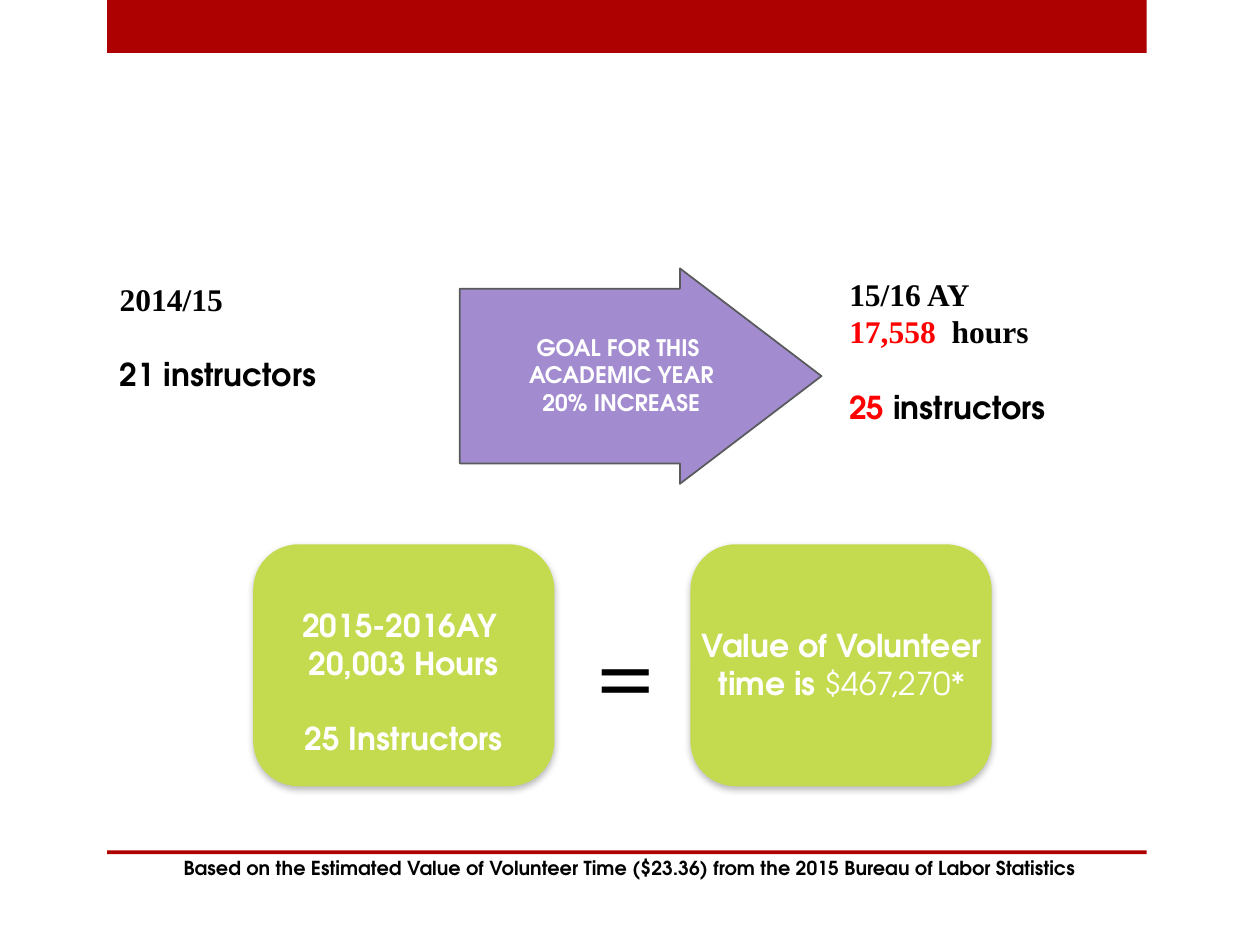
from dataclasses import dataclass

from lxml import etree
from pptx import Presentation
from pptx.dml.color import RGBColor
from pptx.enum.shapes import MSO_SHAPE
from pptx.enum.text import PP_ALIGN
from pptx.oxml.ns import qn
from pptx.util import Inches, Pt

RECTANGLE = MSO_SHAPE.RECTANGLE
ROUNDED = MSO_SHAPE.ROUNDED_RECTANGLE
ARROW = MSO_SHAPE.RIGHT_ARROW
LEFT, CENTER = PP_ALIGN.LEFT, PP_ALIGN.CENTER


@dataclass(frozen=True)
class Theme:
    red: str = "AD0101"
    green: str = "C5DB4F"
    purple: str = "A28CCF"
    outline: str = "585A5C"
    accent: str = "FF0000"
    black: str = "000000"
    white: str = "FFFFFF"
    sans: str = "TeX Gyre Adventor"
    serif: str = "Times New Roman"
    body: int = 18
    goal: int = 13
    note: int = 11
    symbol: int = 48
    gap: float = 21.6


THEME = Theme()


@dataclass(frozen=True)
class Box:
    left: float
    top: float
    width: float
    height: float

    def inner(self, left, top, width, height):
        return Box(self.left + left, self.top + top, width, height)

    def lengths(self):
        return [Inches(value) for value in (self.left, self.top, self.width, self.height)]


@dataclass(frozen=True)
class Span:
    text: str
    color: str = THEME.black
    font: str = THEME.sans
    size: int = THEME.body
    bold: bool = True


def add_block(slide, kind, box, color, adjustments=()):
    shape = slide.shapes.add_shape(kind, *box.lengths())
    shape.shadow.inherit = False
    shape.fill.solid()
    shape.fill.fore_color.rgb = RGBColor.from_string(color)
    shape.line.fill.background()
    for index, value in enumerate(adjustments):
        shape.adjustments[index] = value
    return shape


def add_soft_shadow(shape):
    effects = shape._element.spPr.find(qn("a:effectLst"))
    shadow = etree.SubElement(
        effects, qn("a:outerShdw"), blurRad=str(Pt(4)), dist=str(Pt(2)), dir="5400000", rotWithShape="0"
    )
    color = etree.SubElement(shadow, qn("a:srgbClr"), val=THEME.black)
    etree.SubElement(color, qn("a:alpha"), val="28000")


def add_text(slide, box, lines, alignment=LEFT, wrap=True, gap_before=None):
    text_frame = slide.shapes.add_textbox(*box.lengths()).text_frame
    text_frame.word_wrap = wrap
    text_frame.margin_left = text_frame.margin_right = Inches(0.05)
    text_frame.margin_top = text_frame.margin_bottom = Inches(0.05)
    for index, spans in enumerate(lines):
        paragraph = text_frame.add_paragraph() if index else text_frame.paragraphs[0]
        paragraph.alignment = alignment
        if index == gap_before:
            paragraph.space_before = Pt(THEME.gap)
        for span in spans:
            run = paragraph.add_run()
            run.text = span.text
            run.font.name = span.font
            run.font.size = Pt(span.size)
            run.font.bold = span.bold
            run.font.color.rgb = RGBColor.from_string(span.color)


def add_frame(slide, box):
    add_block(slide, RECTANGLE, box.inner(0, 0, box.width, 0.42), THEME.red)
    add_block(slide, RECTANGLE, box.inner(0, box.height - 0.03, box.width, 0.03), THEME.red)


def add_goal(slide, box):
    add_text(
        slide,
        box.inner(0, 0.04, 2.6, 1.01),
        [[Span("2014/15", font=THEME.serif)], [Span("21 instructors")]],
        gap_before=1,
    )
    arrow = add_block(slide, ARROW, box.inner(2.75, 0, 2.87, 1.71), THEME.purple, (0.811, 0.657))
    arrow.line.color.rgb = RGBColor.from_string(THEME.outline)
    arrow.line.width = Pt(1)
    goal_lines = ("GOAL FOR THIS ", "ACADEMIC YEAR", "20% INCREASE")
    add_text(
        slide,
        box.inner(2.32, 0.47, 3.42, 0.77),
        [[Span(line, THEME.white, size=THEME.goal)] for line in goal_lines],
        CENTER,
    )
    add_text(
        slide,
        box.inner(5.79, 0, 3.88, 1.31),
        [
            [Span("15/16 AY", font=THEME.serif)],
            [Span("17,558 ", THEME.accent, THEME.serif), Span(" hours", font=THEME.serif)],
            [Span("25", THEME.accent), Span(" instructors")],
        ],
        gap_before=2,
    )


def add_result(slide, box):
    card_width = 2.39
    for left in (0, box.width - card_width):
        card = add_block(slide, ROUNDED, box.inner(left, 0, card_width, box.height), THEME.green, (0.187,))
        add_soft_shadow(card)
    result_lines = ("2015-2016AY ", "20,003 Hours", "25 Instructors")
    add_text(
        slide,
        box.inner(-0.31, 0.44, 3.01, 1.31),
        [[Span(line, THEME.white)] for line in result_lines],
        CENTER,
        gap_before=2,
    )
    add_text(
        slide,
        box.inner(2.67, 0.54, 0.52, 0.92),
        [[Span("=", size=THEME.symbol, bold=False)]],
        wrap=False,
    )
    add_text(
        slide,
        box.inner(box.width - card_width, 0.6, 2.4, 0.71),
        [[Span("Value of Volunteer time is ", THEME.white), Span("$467,270*", THEME.white, bold=False)]],
        CENTER,
    )


def add_note(slide, box):
    note = "Based on the Estimated Value of Volunteer Time ($23.36) from the 2015 Bureau of Labor Statistics"
    add_text(slide, box, [[Span(note, size=THEME.note)]], CENTER)


def main():
    presentation = Presentation()
    presentation.slide_width = Inches(10)
    presentation.slide_height = Inches(7.5)
    slide = presentation.slides.add_slide(presentation.slide_layouts[6])
    add_frame(slide, Box(0.85, 0, 8.25, 6.78))
    add_goal(slide, Box(0.9, 2.13, 9.67, 1.71))
    add_result(slide, Box(2.01, 4.32, 5.86, 1.92))
    add_note(slide, Box(0.52, 6.75, 8.96, 0.28))
    presentation.save("out.pptx")


if __name__ == "__main__":
    main()
